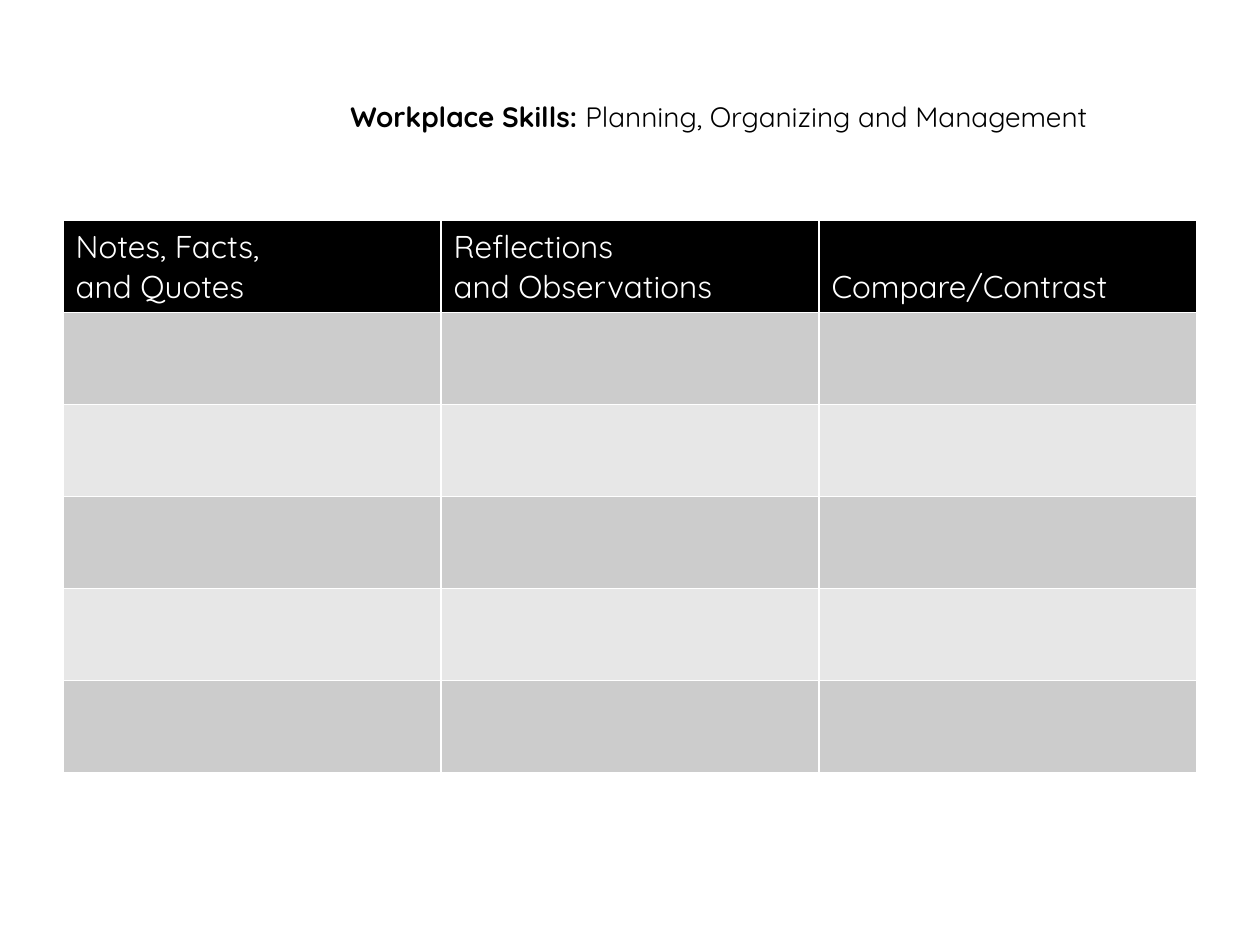
from lxml import etree
from pptx import Presentation
from pptx.dml.color import RGBColor
from pptx.enum import text
from pptx.oxml.ns import qn
from pptx.util import Inches, Pt

# Content
TITLE = [("Workplace Skills: ", True), ("Planning, Organizing and Management", False)]
HEADERS = ["Notes, Facts,\vand Quotes", "Reflections\vand Observations", "Compare/Contrast"]
BLANK_ROWS = 5

# Style
FONT = "Quicksand"
COLORS = {"ink": "000000", "line": "FFFFFF", "dark": "CCCCCC", "light": "E7E7E7"}
COL_W, ROW_H = 3, 0.73


def rgb(name):
    return RGBColor.from_string(COLORS[name])


def set_font(p, size, color):
    p.font.name, p.font.size = FONT, Pt(size)
    p.font.color.rgb = rgb(color)


def set_borders(cell, color, width):
    tc_pr = cell._tc.get_or_add_tcPr()
    for side in ("lnL", "lnR", "lnT", "lnB"):
        ln = etree.SubElement(tc_pr, qn(f"a:{side}"), w=str(Pt(width)))
        fill = etree.SubElement(ln, qn("a:solidFill"))
        etree.SubElement(fill, qn("a:srgbClr"), val=COLORS[color])


prs = Presentation()
prs.slide_width, prs.slide_height = Inches(10), Inches(7.5)
s = prs.slides.add_slide(prs.slide_layouts[5])

# Title
title = s.shapes.title
title.left, title.top = Inches(0.6), Inches(0.3)
title.width, title.height = Inches(8.13), Inches(1.25)
tf = title.text_frame
tf.word_wrap = True
tf.vertical_anchor = text.MSO_ANCHOR.MIDDLE
p = tf.paragraphs[0]
p.alignment = text.PP_ALIGN.RIGHT
set_font(p, 16, "ink")
for words, bold in TITLE:
    r = p.add_run()
    r.text, r.font.bold = words, bold

# Note-taking table: a header row above blank banded rows
rows, cols = BLANK_ROWS + 1, len(HEADERS)
table = s.shapes.add_table(rows, cols, Inches(0.5), Inches(1.75),
                           Inches(COL_W * cols), Inches(ROW_H * rows)).table
for col in table.columns:
    col.width = Inches(COL_W)
for i, row in enumerate(table.rows):
    row.height = Inches(ROW_H)
    for j, cell in enumerate(row.cells):
        set_borders(cell, "line", 1)
        cell.fill.solid()
        if i == 0:
            cell.fill.fore_color.rgb = rgb("ink")
            cell.vertical_anchor = text.MSO_ANCHOR.BOTTOM
            cell.text_frame.text = HEADERS[j]
            p = cell.text_frame.paragraphs[0]
            set_font(p, 18, "line")
            p.font.bold = False
        else:
            cell.fill.fore_color.rgb = rgb("dark" if i % 2 else "light")

prs.save("out.pptx")
